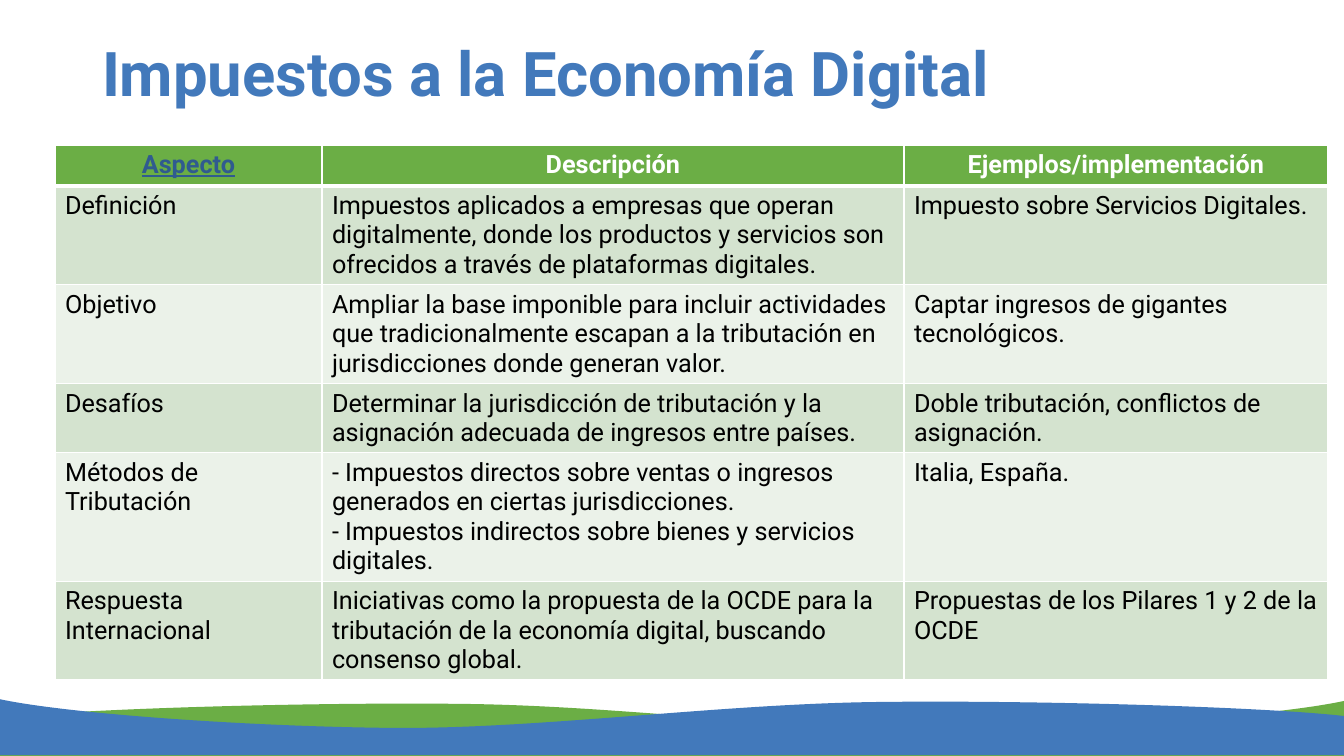
from dataclasses import dataclass

from lxml import etree
from pptx import Presentation
from pptx import util as u
from pptx.dml import color
from pptx.enum import text
from pptx.oxml import ns

EMU_PER_PX = 914400 / 100.8
SLIDE_SIZE = (1344, 756)


@dataclass(frozen=True)
class Theme:
    font: str = "Roboto"
    title_size: int = 44
    table_size: int = 18
    blue: str = "4279BB"
    green: str = "6BAE45"
    link: str = "305B8F"
    black: str = "000000"
    white: str = "FFFFFF"
    bands: tuple = ("D4E3CF", "EBF2E9")


THEME = Theme()

COLUMN_WIDTHS = (267, 582, 424)
ROW_HEIGHT = 41  # minimum: rows grow with their text
ROWS = (
    ("Aspecto", "Descripción", "Ejemplos/implementación"),
    ("Definición",
     "Impuestos aplicados a empresas que operan digitalmente, donde los productos "
     "y servicios son ofrecidos a través de plataformas digitales.",
     "Impuesto sobre Servicios Digitales."),
    ("Objetivo",
     "Ampliar la base imponible para incluir actividades que tradicionalmente "
     "escapan a la tributación en jurisdicciones donde generan valor.",
     "Captar ingresos de gigantes tecnológicos."),
    ("Desafíos",
     "Determinar la jurisdicción de tributación y la asignación adecuada de "
     "ingresos entre países.",
     "Doble tributación, conflictos de asignación."),
    ("Métodos de Tributación",
     "- Impuestos directos sobre ventas o ingresos generados en ciertas "
     "jurisdicciones.\n"
     "- Impuestos indirectos sobre bienes y servicios digitales.",
     "Italia, España."),
    ("Respuesta Internacional",
     "Iniciativas como la propuesta de la OCDE para la tributación de la economía "
     "digital, buscando consenso global.",
     "Propuestas de los Pilares 1 y 2 de la OCDE"),
)

# Crest of the wave: a start point, then three points per Bézier curve
WAVE_CREST = ((0, 17), (78, 8), (309, 1), (467, 3), (624, 5), (796, 29),
              (943, 29), (1090, 28), (1276, 15), (1345, 0))


def px(length):
    return u.Emu(round(length * EMU_PER_PX))


def rgb(value):
    return color.RGBColor.from_string(value)


def style_paragraph(paragraph, size, font_color, bold=False):
    font = paragraph.font
    font.name = THEME.font
    font.size = u.Pt(size)
    font.bold = bold
    font.color.rgb = rgb(font_color)


def bend_crest(shape):
    """Turn each three line segments of the crest into one Bézier curve."""
    segments = list(shape._element.iter(ns.qn("a:lnTo")))
    for first in range(0, len(WAVE_CREST) - 1, 3):
        group = segments[first:first + 3]
        curve = etree.Element(ns.qn("a:cubicBezTo"))
        group[0].addprevious(curve)
        for segment in group:
            curve.append(segment[0])
            segment.getparent().remove(segment)


def add_wave(slide, box, fill, mirrored=False):
    left, top, width, height = box
    outline = WAVE_CREST + ((width, height), (0, height))
    corners = [(px(left + (width - x if mirrored else x)), px(top + y))
               for x, y in outline]
    builder = slide.shapes.build_freeform(*corners[0])
    builder.add_line_segments(corners[1:], close=True)
    shape = builder.convert_to_shape()
    bend_crest(shape)
    shape.shadow.inherit = False
    shape.fill.solid()
    shape.fill.fore_color.rgb = rgb(fill)
    shape.line.fill.background()


def add_title(slide, box, title_text):
    title = slide.shapes.title
    title.left, title.top, title.width, title.height = map(px, box)
    frame = title.text_frame
    frame.text = title_text
    frame.word_wrap = True
    frame.auto_size = text.MSO_AUTO_SIZE.NONE
    frame.vertical_anchor = text.MSO_ANCHOR.TOP
    frame.margin_top = px(3)
    paragraph = frame.paragraphs[0]
    paragraph.alignment = text.PP_ALIGN.LEFT
    paragraph.line_spacing = 0.9
    style_paragraph(paragraph, THEME.title_size, THEME.blue, bold=True)


def set_borders(cell, top_width, bottom_width):
    properties = cell._tc.get_or_add_tcPr()
    widths = {"lnL": 1, "lnR": 1, "lnT": top_width, "lnB": bottom_width}
    for side, width in widths.items():
        line = etree.SubElement(properties, ns.qn(f"a:{side}"), w=str(u.Pt(width)))
        fill = etree.SubElement(line, ns.qn("a:solidFill"))
        etree.SubElement(fill, ns.qn("a:srgbClr"), val=THEME.white)


def add_tax_table(slide, box):
    frame = slide.shapes.add_table(len(ROWS), len(COLUMN_WIDTHS), *map(px, box))
    table = frame.table
    for column, width in zip(table.columns, COLUMN_WIDTHS):
        column.width = px(width)
    for row in table.rows:
        row.height = px(ROW_HEIGHT)
    frame.height = px(box[3])

    for row_index, row in enumerate(ROWS):
        header = row_index == 0
        fill = THEME.green if header else THEME.bands[(row_index - 1) % 2]
        for column_index, content in enumerate(row):
            cell = table.cell(row_index, column_index)
            set_borders(cell, 3 if row_index == 1 else 1, 3 if header else 1)
            cell.fill.solid()
            cell.fill.fore_color.rgb = rgb(fill)
            cell.text = content
            for paragraph in cell.text_frame.paragraphs:
                if header:
                    paragraph.alignment = text.PP_ALIGN.CENTER
                style_paragraph(paragraph, THEME.table_size,
                                THEME.white if header else THEME.black, bold=header)

    # The first heading looks like a link
    heading_font = table.cell(0, 0).text_frame.paragraphs[0].font
    heading_font.color.rgb = rgb(THEME.link)
    heading_font.underline = True


def main():
    presentation = Presentation()
    presentation.slide_width, presentation.slide_height = map(px, SLIDE_SIZE)
    slide = presentation.slides.add_slide(presentation.slide_layouts[5])

    # Waves along the foot
    add_wave(slide, (-1, 701, 1345, 57), THEME.green)
    add_wave(slide, (-1, 699, 1345, 56), THEME.blue, mirrored=True)

    # Title and table
    add_title(slide, (92, 40, 1159, 146), "Impuestos a la Economía Digital")
    add_tax_table(slide, (55, 145, sum(COLUMN_WIDTHS), 545))

    presentation.save("out.pptx")


if __name__ == "__main__":
    main()
